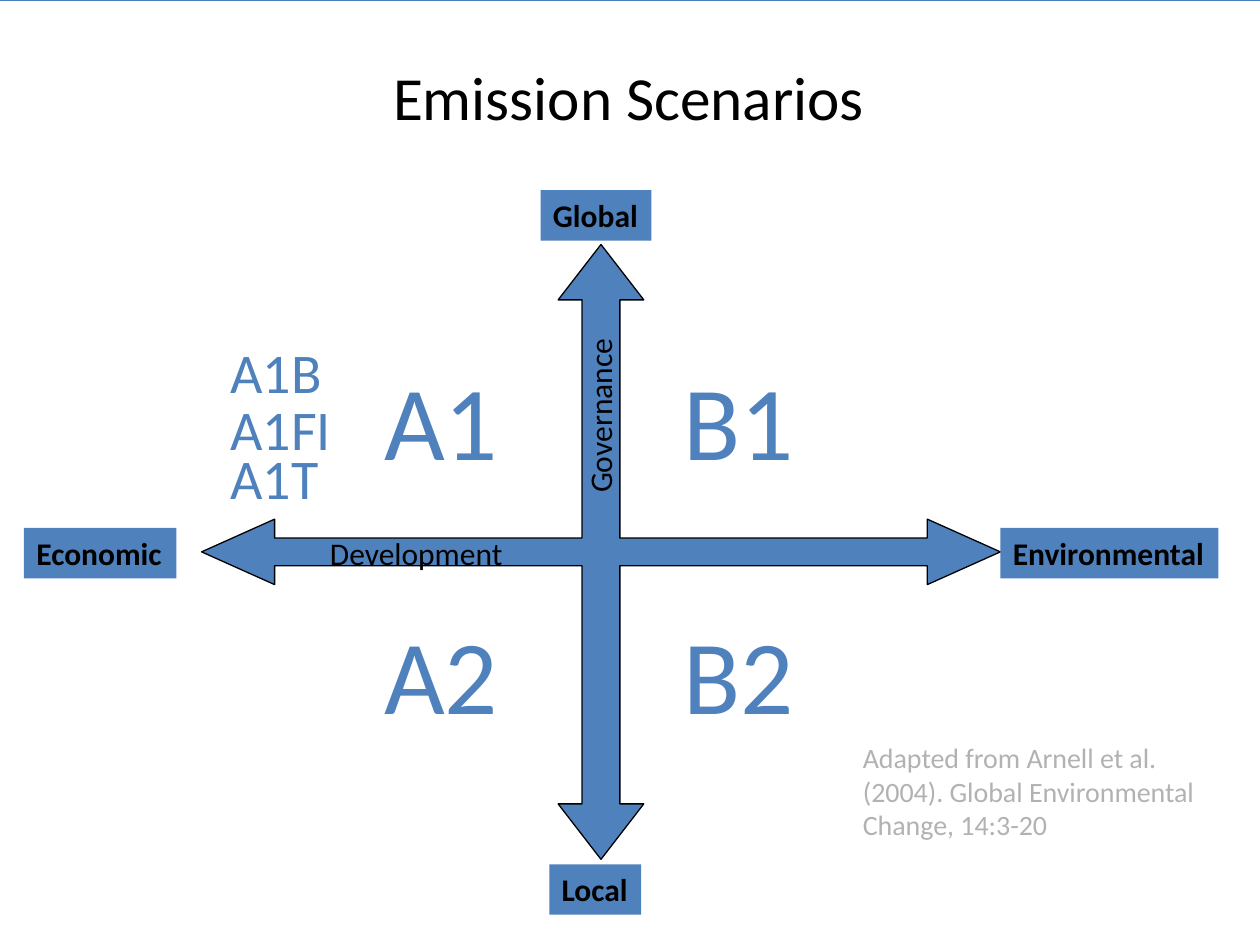
from pptx import Presentation
from pptx.dml.color import RGBColor
from pptx.enum.shapes import MSO_SHAPE
from pptx.enum.text import MSO_ANCHOR, MSO_AUTO_SIZE, PP_ALIGN
from pptx.util import Inches, Pt

RECTANGLE = MSO_SHAPE.RECTANGLE
TOP = MSO_ANCHOR.TOP
NO_FIT, GROW = MSO_AUTO_SIZE.NONE, MSO_AUTO_SIZE.SHAPE_TO_FIT_TEXT
LEFT, CENTER = PP_ALIGN.LEFT, PP_ALIGN.CENTER

FONT = "Calibri"
COLORS = {"blue": "4F81BD", "edge": "4B7EBC", "black": "000000",
          "gray": "B2B2B2", "white": "FFFFFF"}


def color(name):
    return RGBColor.from_string(COLORS[name])


def box(left, top, width, height):
    return [Inches(value) for value in (left, top, width, height)]


def write(shape, text, size=18, ink="black", bold=False, align=LEFT,
          wrap=False, fit=GROW):
    """Put one formatted paragraph into a shape."""
    frame = shape.text_frame
    frame.text = text
    frame.word_wrap = wrap
    frame.auto_size = fit
    frame.vertical_anchor = TOP
    paragraph = frame.paragraphs[0]
    paragraph.alignment = align
    font = paragraph.runs[0].font
    font.name, font.size, font.bold = FONT, Pt(size), bold
    font.color.rgb = color(ink)


def paint(shape, fill, line=None):
    """Give a shape a flat fill and a thin line or none."""
    shape.shadow.inherit = False
    shape.fill.solid()
    shape.fill.fore_color.rgb = color(fill)
    if line:
        shape.line.color.rgb = color(line)
        shape.line.width = Pt(0.75)
    else:
        shape.line.fill.background()


class Board:
    """The current slide and its style."""

    def __init__(self, slide):
        self.shapes = slide.shapes

    def backdrop(self, *place):
        shape = self.shapes.add_shape(RECTANGLE, *box(*place))
        paint(shape, "white", "edge")
        # Place it behind the title placeholder
        self.shapes.title._element.addprevious(shape._element)

    def title(self, text, *place):
        shape = self.shapes.title
        shape.left, shape.top, shape.width, shape.height = box(*place)
        write(shape, text, size=35, align=CENTER, wrap=True, fit=NO_FIT)

    def text(self, text, *place, rotation=0, **style):
        shape = self.shapes.add_textbox(*box(*place))
        shape.rotation = rotation
        write(shape, text, **style)

    def label(self, text, *place):
        shape = self.shapes.add_shape(RECTANGLE, *box(*place))
        paint(shape, "blue")
        write(shape, text, bold=True)

    def outline(self, points):
        corners = [(Inches(x), Inches(y)) for x, y in points]
        builder = self.shapes.build_freeform(*corners[0])
        builder.add_line_segments(corners[1:], close=True)
        paint(builder.convert_to_shape(), "blue", "black")


def cross_points(center_x, center_y):
    """Mirror one quarter of the four-headed arrow around its center."""
    quarter = [(0, 2.44), (0.34, 2), (0.15, 2), (0.15, 0.11),
               (2.59, 0.11), (2.59, 0.26), (3.17, 0)]
    points = []
    for sign_x, sign_y in ((1, -1), (1, 1), (-1, 1), (-1, -1)):
        ordered = quarter if sign_x != sign_y else quarter[::-1]
        points += [(center_x + sign_x * x, center_y + sign_y * y)
                   for x, y in ordered[:-1]]
    return points


def main():
    presentation = Presentation()
    presentation.slide_width, presentation.slide_height = Inches(10), Inches(7.5)
    board = Board(presentation.slides.add_slide(presentation.slide_layouts[5]))

    # Backdrop, whose upper edge runs along the top, and title
    board.backdrop(-0.5, 0, 11.17, 7.83)
    board.title("Emission Scenarios", 0.5, 0.42, 8.98, 1.28)

    # Crossed axes with their names
    board.outline(cross_points(4.77, 4.38))
    board.text("Governance", 4.04, 3.09, 1.44, 0.4, rotation=270)
    board.text("Development", 2.52, 4.19, 1.59, 0.4)

    # Labels at the ends of the axes
    for text, left, top, width in (("Local", 4.36, 6.86, 0.73),
                                   ("Global", 4.29, 1.51, 0.88),
                                   ("Environmental", 7.94, 4.19, 1.73),
                                   ("Economic", 0.19, 4.19, 1.21)):
        board.label(text, left, top, width, 0.4)

    # Scenario families, one in each quadrant
    for letter, left, width in (("A", 2.95, 1.11), ("B", 5.33, 1.09)):
        for number, top in ((1, 2.77), (2, 4.79)):
            board.text(f"{letter}{number}", left, top, width, 1.11,
                       size=60, ink="blue")

    # Variants of A1
    for text, top, width in (("A1B", 2.63, 0.93), ("A1FI", 3.08, 1.01),
                             ("A1T", 3.47, 0.91)):
        board.text(text, 1.73, top, width, 0.64, size=32, ink="blue")

    # Citation
    board.text("Adapted from Arnell et al. (2004). Global Environmental "
               "Change, 14:3-20", 6.75, 5.83, 3.1, 0.9,
               size=16, ink="gray", wrap=True)

    presentation.save("out.pptx")


if __name__ == "__main__":
    main()
